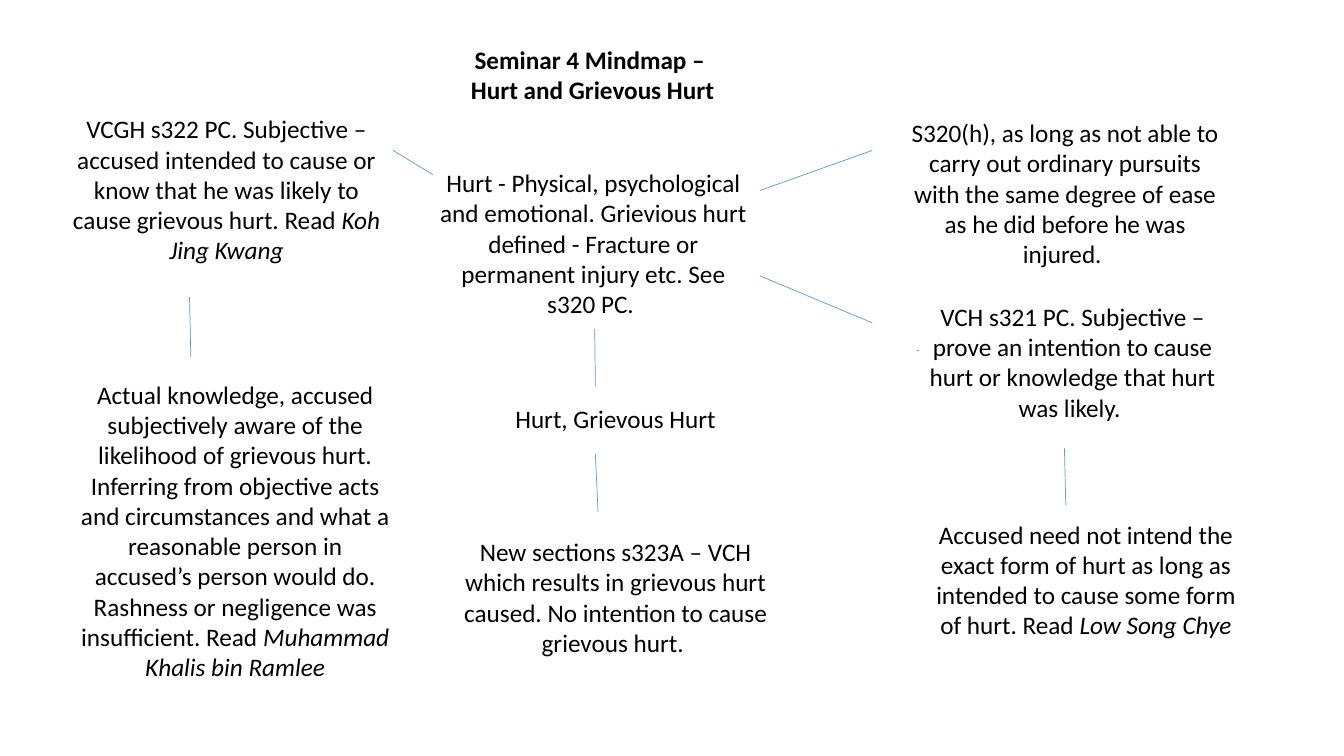
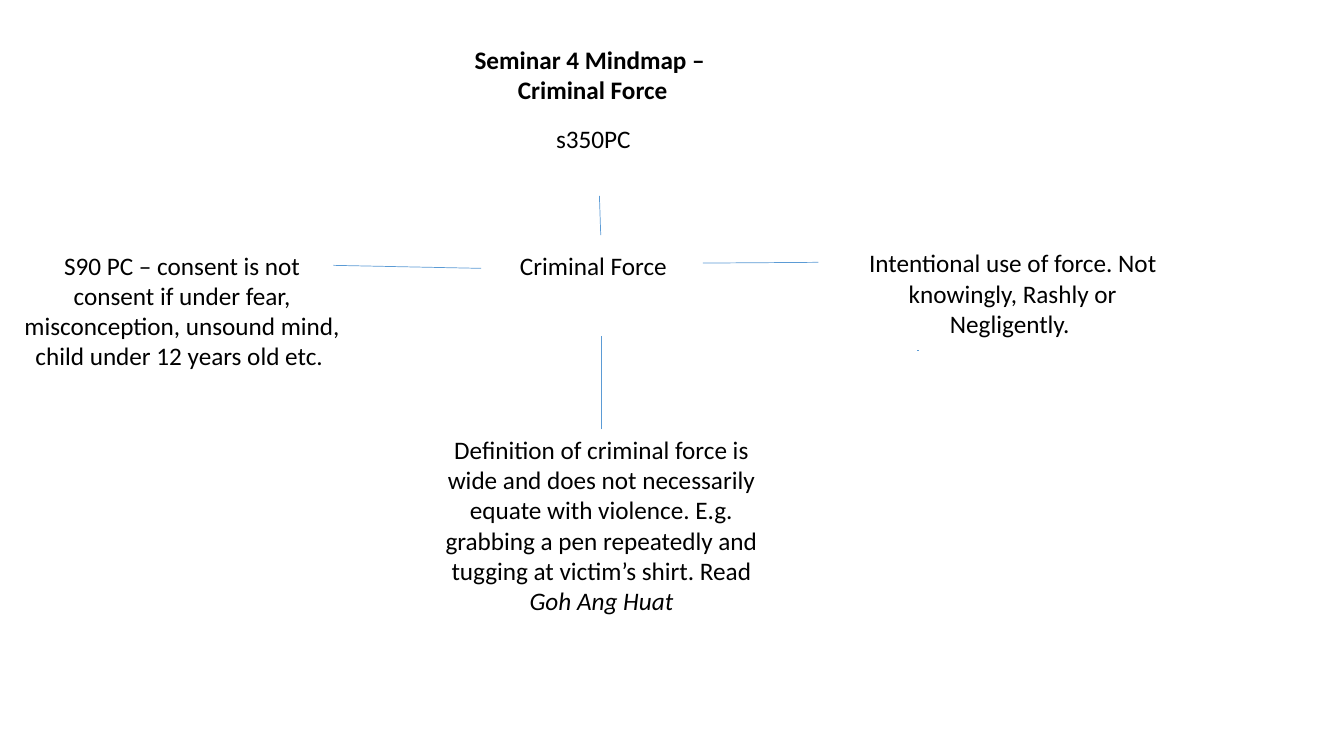
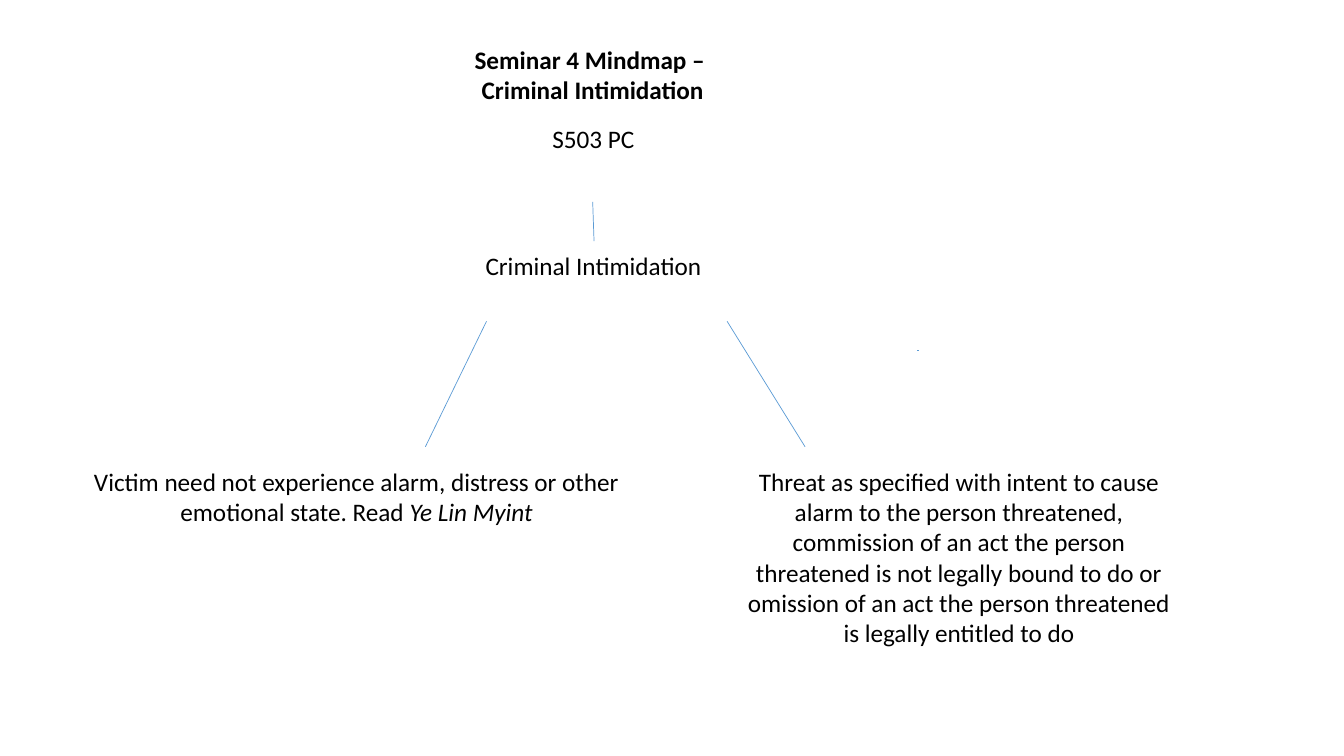
from lxml import etree
from pptx import Presentation
from pptx.dml.color import RGBColor
from pptx.enum.shapes import MSO_CONNECTOR
from pptx.enum.text import MSO_AUTO_SIZE, PP_ALIGN
from pptx.oxml.ns import qn
from pptx.util import Inches, Pt

BLACK = RGBColor(0x00, 0x00, 0x00)
BLUE = RGBColor(0x5B, 0x9B, 0xD5)
FONT = "Calibri"
SIZE = Pt(18)
THIN = Pt(0.5)
CENTER = PP_ALIGN.CENTER
FIT = MSO_AUTO_SIZE.SHAPE_TO_FIT_TEXT
STRAIGHT = MSO_CONNECTOR.STRAIGHT
TOP = 0

WIDE = Inches(13.33)
HIGH = Inches(7.5)
ROW = Inches(0.3)
PAD = Inches(0.1)
QUARTER = 25


def across(share):
    """Length of a percentage of the slide's width."""
    return round(WIDE * share / 100)


def down(share):
    """Length of a percentage of the slide's height."""
    return round(HIGH * share / 100)


def run(para, words, bold=False, italic=False):
    part = para.add_run()
    part.text = words
    font = part.font
    font.name, font.size = FONT, SIZE
    font.bold, font.italic = bold, italic
    font.color.rgb = BLACK


def text(slide, words, x, y, rows=1, w=QUARTER, bold=False, case=""):
    """Centred box of a number of text rows; a case name follows in italics."""
    box = slide.shapes.add_textbox(across(x), down(y), across(w),
                                   PAD + rows * ROW)
    frame = box.text_frame
    frame.word_wrap = True
    frame.auto_size = FIT
    for index, line in enumerate(words.split("\n")):
        para = frame.add_paragraph() if index else frame.paragraphs[0]
        para.alignment = CENTER
        run(para, line, bold=bold)
    if case:
        run(para, case, italic=True)
    return box


def link(slide, x1, y1, x2, y2):
    line = slide.shapes.add_connector(STRAIGHT, across(x1), down(y1),
                                      across(x2), down(y2))
    line.line.color.rgb = BLUE
    line.line.width = THIN
    etree.SubElement(line._element.spPr, qn("a:effectLst"))
    return line


def start(deck, topic, links):
    """Add a slide with the shared title, the small tick and its links."""
    slide = deck.slides.add_slide(deck.slide_layouts[6])
    text(slide, "Seminar 4 Mindmap – \n" + topic, 30, 5.2, rows=2, w=28.2,
         bold=True)
    for ends in [(68.25, 46.3, 68.35, 46.3)] + links:
        link(slide, *ends)
    return slide


def hurt(deck):
    slide = start(deck, "Hurt and Grievous Hurt", [
        (14.2, 47.2, 14.1, 39.3),
        (44.3, 51.1, 44.25, 43.5),
        (64.9, 42.7, 56.55, 36.5),
        (32.2, 23.1, 29.25, 19.9),
        (56.55, 25.2, 64.9, 19.9),
        (79.3, 66.8, 79.2, 59.3),
        (44.5, 67.7, 44.3, 60.1),
    ])
    text(slide, "Hurt, Grievous Hurt", 33.3, 52.7)
    text(slide, "Hurt - Physical, psychological and emotional. Grievious hurt "
         "defined - Fracture or permanent injury etc. See s320 PC. ",
         31.65, 21.5, rows=5)
    text(slide, "VCGH s322 PC. Subjective – accused intended to cause or know "
         "that he was likely to cause grievous hurt. Read ",
         4.35, 14.4, rows=5, case="Koh Jing Kwang")
    text(slide, "S320(h), as long as not able to carry out ordinary pursuits "
         "with the same degree of ease as he did before he was injured. ",
         66.75, 14.9, rows=5)
    text(slide, "VCH s321 PC. Subjective – prove an intention to cause hurt "
         "or knowledge that hurt was likely. ", 67.3, 39.2, rows=4)
    text(slide, "Actual knowledge, accused subjectively aware of the "
         "likelihood of grievous hurt. Inferring from objective acts and "
         "circumstances and what a reasonable person in accused’s person "
         "would do. Rashness or negligence was insufficient. Read ",
         5, 49.5, rows=10, case="Muhammad Khalis bin Ramlee")
    text(slide, "Accused need not intend the exact form of hurt as long as "
         "intended to cause some form of hurt. Read ",
         68.3, 68, rows=4, case="Low Song Chye")
    text(slide, "New sections s323A – VCH which results in grievous hurt "
         "caused. No intention to cause grievous hurt. ",
         33.3, 70.3, rows=4)


def force(deck):
    slide = start(deck, "Criminal Force", [
        (52.3, 34.8, 60.9, 34.7),
        (44.7, 31.1, 44.6, 25.9),
        (35.8, 35.5, 24.8, 35.1),
    ])
    text(slide, "s350PC", 31.65, 15.7)
    text(slide, "Criminal Force", 31.65, 32.4)
    text(slide, "S90 PC – consent is not consent if under fear, "
         "misconception, unsound mind, child under 12 years old etc. ",
         1.05, 32.4, rows=5)
    text(slide, "Intentional use of force. Not knowingly, Rashly or "
         "Negligently. ", 62.85, 32.1, rows=3)
    scope = text(slide, "Definition of criminal force is wide and does not "
                 "necessarily equate with violence. E.g. grabbing a pen "
                 "repeatedly and tugging at victim’s shirt. Read ",
                 32.25, 56.8, rows=6, case="Goh Ang Huat")
    stem = link(slide, 44.75, 56.8, 44.75, 44.4)
    stem.begin_connect(scope, TOP)


def threat(deck):
    slide = start(deck, "Criminal Intimidation", [
        (44.2, 31.9, 44.1, 26.7),
        (36.2, 42.5, 31.65, 59.1),
        (54.1, 42.5, 59.9, 59.1),
    ])
    text(slide, "S503 PC", 31.65, 15.7)
    text(slide, "Criminal Intimidation", 31.65, 32.4)
    text(slide, "Threat as specified with intent to cause alarm to the person "
         "threatened, commission of an act the person threatened is not "
         "legally bound to do or omission of an act the person threatened is "
         "legally entitled to do", 54.9, 61, rows=6, w=32.9)
    text(slide, "Victim need not experience alarm, distress or other "
         "emotional state. Read ", 5, 61, rows=3, w=43.05,
         case="Ye Lin Myint")


def main():
    deck = Presentation()
    deck.slide_width, deck.slide_height = WIDE, HIGH
    for build in (hurt, force, threat):
        build(deck)
    deck.save("out.pptx")


if __name__ == "__main__":
    main()
